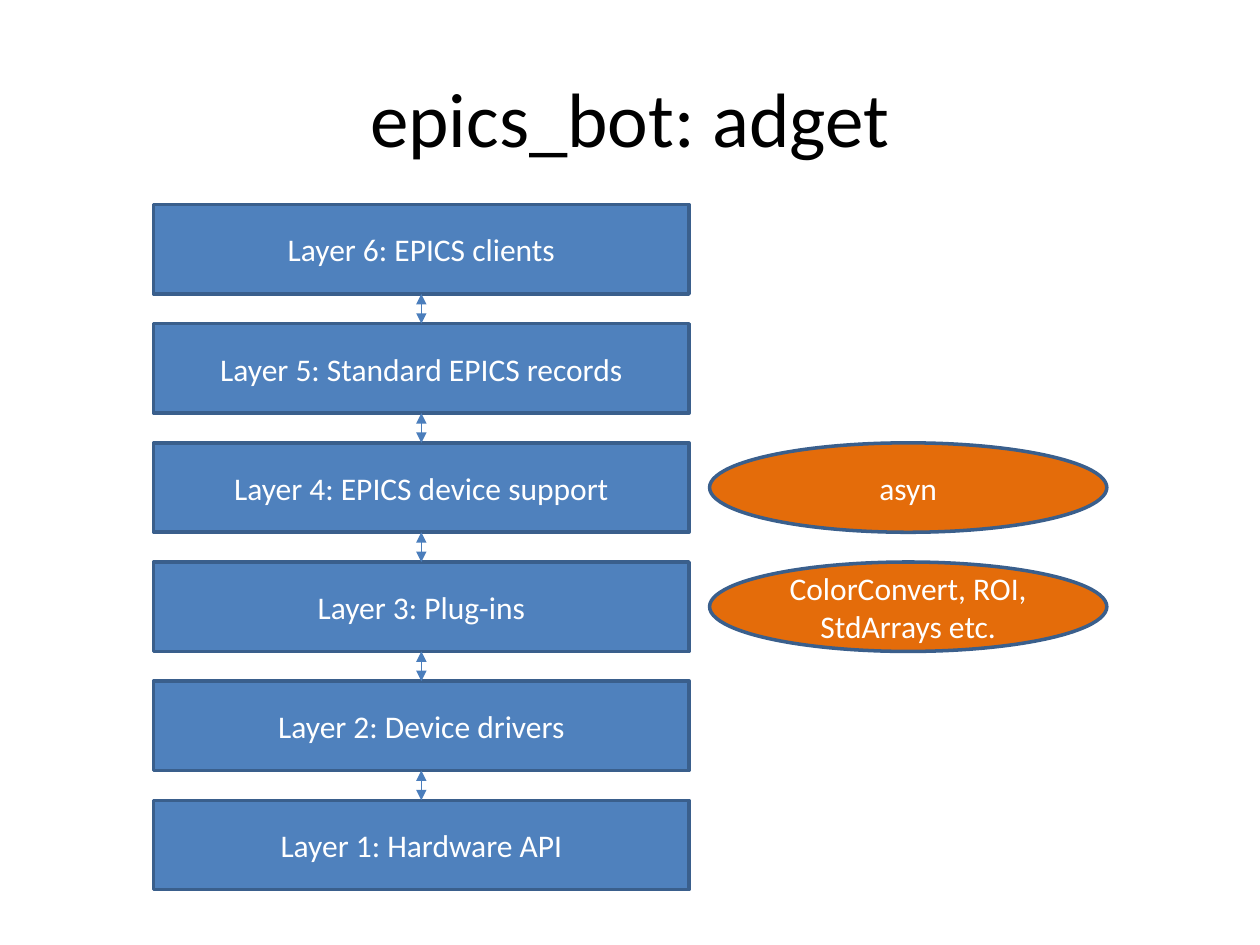
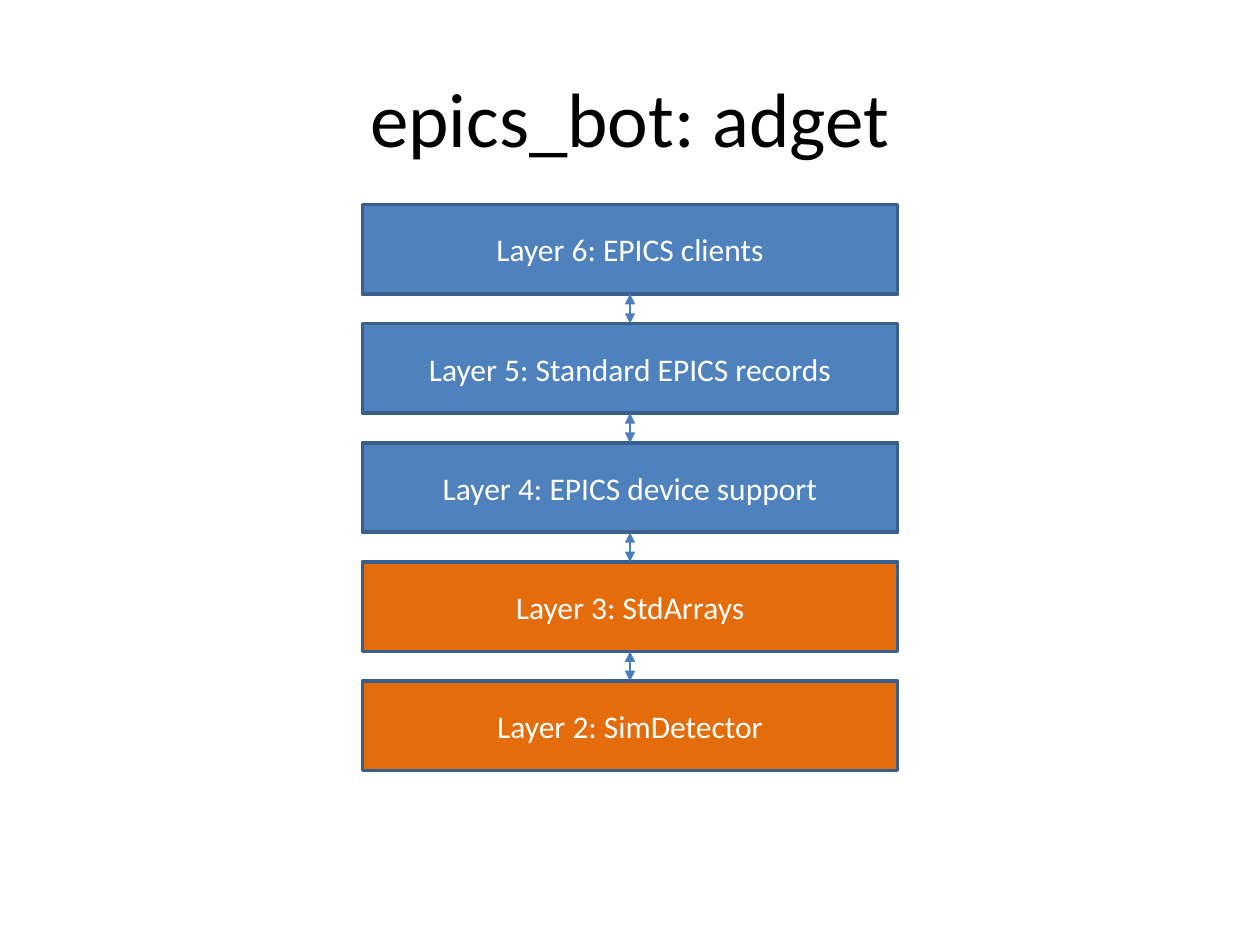
"""Build two slides that show the EPICS layers behind epics_bot: adget."""
from itertools import pairwise

from lxml import etree
from pptx import Presentation
from pptx.dml.color import RGBColor
from pptx.enum import shapes, text
from pptx.oxml import ns
from pptx.util import Pt

BLUE, ORANGE, BORDER, ARROW = "4F81BD", "E46C0A", "3A5F8C", "4B7EBC"
WHITE, BLACK = "FFFFFF", "000000"
FONT = "Calibri"
TITLE = "epics_bot: adget"
STACK_TOP, ROW_PITCH, ROW_HEIGHT = 116.9, 68.08, 51.1
LAYER_WIDTH = 306
MODULE_LEFT, MODULE_WIDTH = 405.5, 227
UPPER_LAYERS = [
    ("Layer 6: EPICS clients", BLUE),
    ("Layer 5: Standard EPICS records", BLUE),
    ("Layer 4: EPICS device support", BLUE),
]


def color(value):
    """Turn a hex string into a colour."""
    return RGBColor.from_string(value)


class LayerDeck:
    """Hold the deck's style and the slide being drawn."""

    def __init__(self):
        """Start an empty 4:3 deck."""
        self.deck = Presentation()
        self.deck.slide_width, self.deck.slide_height = Pt(720), Pt(540)
        self.page = None

    def set_label(self, shape, words, size, ink):
        """Put centred text in a shape."""
        frame = shape.text_frame
        frame.text = words
        frame.word_wrap = True
        frame.auto_size = text.MSO_AUTO_SIZE.NONE
        frame.vertical_anchor = text.MSO_ANCHOR.MIDDLE
        for para in frame.paragraphs:
            para.alignment = text.PP_ALIGN.CENTER
            for span in para.runs:
                span.font.name = FONT
                span.font.size = Pt(size)
                span.font.color.rgb = color(ink)

    def add_page(self, words):
        """Add a slide with its title."""
        self.page = self.deck.slides.add_slide(self.deck.slide_layouts[5])
        title = self.page.shapes.title
        title.left, title.top, title.width, title.height = Pt(36), Pt(21.6), Pt(648), Pt(90)
        self.set_label(title, words, 44, BLACK)

    def add_box(self, kind, left, row, width, words, fill):
        """Draw a labelled shape in a row of the stack."""
        top = STACK_TOP + row * ROW_PITCH
        box = self.page.shapes.add_shape(kind, Pt(left), Pt(top), Pt(width), Pt(ROW_HEIGHT))
        box.shadow.inherit = False
        box.fill.solid()
        box.fill.fore_color.rgb = color(fill)
        box.line.color.rgb = color(BORDER)
        box.line.width = Pt(2)
        self.set_label(box, words, 18, WHITE)
        return box

    def add_arrow(self, upper, lower):
        """Join two stacked boxes with a two-headed arrow."""
        arrow = self.page.shapes.add_connector(shapes.MSO_CONNECTOR.STRAIGHT, 0, 0, 0, 0)
        arrow.begin_connect(upper, 2)
        arrow.end_connect(lower, 0)
        arrow.line.color.rgb = color(ARROW)
        arrow.line.width = Pt(0.75)
        properties = arrow._element.spPr
        line = properties.find(ns.qn("a:ln"))
        for end in ("a:headEnd", "a:tailEnd"):
            etree.SubElement(line, ns.qn(end), type="triangle")
        etree.SubElement(properties, ns.qn("a:effectLst"))

    def add_stack(self, left, layers):
        """Draw the layers from top to bottom and the arrows between them."""
        boxes = [
            self.add_box(shapes.MSO_SHAPE.RECTANGLE, left, row, LAYER_WIDTH, words, fill)
            for row, (words, fill) in enumerate(layers)
        ]
        for upper, lower in pairwise(boxes):
            self.add_arrow(upper, lower)

    def add_module(self, row, words):
        """Draw an ellipse beside a layer."""
        self.add_box(shapes.MSO_SHAPE.OVAL, MODULE_LEFT, row, MODULE_WIDTH, words, ORANGE)


def main():
    """Draw both slides and save the deck."""
    layers = LayerDeck()

    layers.add_page(TITLE)
    layers.add_stack(87.8, UPPER_LAYERS + [
        ("Layer 3: Plug-ins", BLUE),
        ("Layer 2: Device drivers", BLUE),
        ("Layer 1: Hardware API", BLUE),
    ])
    layers.add_module(2, "asyn")
    layers.add_module(3, "ColorConvert, ROI, StdArrays etc.")

    layers.add_page(TITLE)
    layers.add_stack(207, UPPER_LAYERS + [
        ("Layer 3: StdArrays", ORANGE),
        ("Layer 2: SimDetector", ORANGE),
    ])

    layers.deck.save("out.pptx")


if __name__ == "__main__":
    main()
